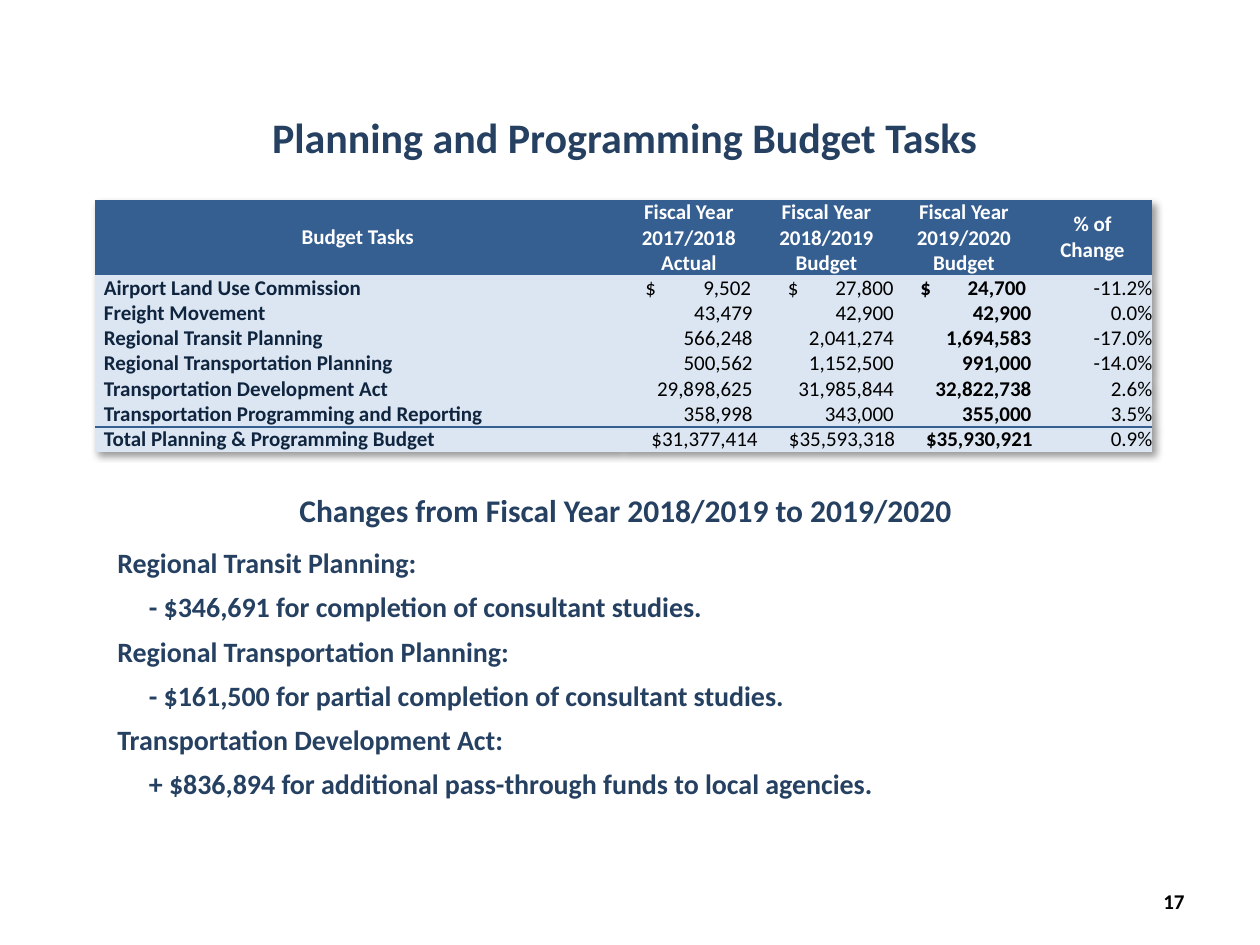
from lxml.etree import SubElement
from pptx import Presentation
from pptx.dml.color import RGBColor
from pptx.enum.text import MSO_ANCHOR as Anchor, PP_ALIGN as Align
from pptx.oxml.ns import qn
from pptx.util import Inches, Pt

COLORS = {
    "navy": "254061", "header": "365F91", "body": "DCE6F2",
    "task": "0F243E", "black": "000000", "white": "FFFFFF",
}
FONT = "Calibri"
UNIT = Inches(10) / 120
PLAIN_STYLE = "{2D5ABB26-0587-4C30-8999-92F81FD0307C}"

HEADER = [
    ["Budget Tasks"],
    ["Fiscal Year 2017/2018", "Actual"],
    ["Fiscal Year 2018/2019", "Budget"],
    ["Fiscal Year 2019/2020", "Budget"],
    ["% of Change"],
]
TASKS = [
    ["Airport Land Use Commission", "$\t9,502", "$\t27,800", "$\t24,700", "-11.2%"],
    ["Freight Movement", "43,479", "42,900", "42,900", "0.0%"],
    ["Regional Transit Planning", "566,248", "2,041,274", "1,694,583", "-17.0%"],
    ["Regional Transportation Planning", "500,562", "1,152,500", "991,000", "-14.0%"],
    ["Transportation Development Act", "29,898,625", "31,985,844", "32,822,738", "2.6%"],
    ["Transportation Programming and Reporting", "358,998", "343,000", "355,000", "3.5%"],
    ["Total Planning & Programming Budget", "$31,377,414", "$35,593,318", "$35,930,921", "0.9%"],
]
CHANGES = [
    ("Regional Transit Planning:", "- $346,691 for completion of consultant studies."),
    ("Regional Transportation Planning:",
     "- $161,500 for partial completion of consultant studies."),
    ("Transportation Development Act:",
     "+ $836,894 for additional pass-through funds to local agencies."),
]
COLUMNS = [50, 13.1, 13.1, 13.1, 11.4]
ROWS = [7.2] + [2.4] * len(TASKS)
LEFT_INSETS = [0.07, 0.2, 0.24, 0.2, 0]
RIGHT_INSETS = [0.07, 0.04, 0.01, 0.01, 0]


def grid(count):
    """Turn a number of grid units into a length."""
    return round(count * UNIT)


def style(paragraph, size, color, bold=True):
    """Set the font of a paragraph."""
    font = paragraph.font
    font.name, font.size, font.bold = FONT, Pt(size), bold
    font.color.rgb = RGBColor.from_string(COLORS[color])


def add_frame(slide, box, anchor=Anchor.TOP):
    """Add a wrapping text box and return its text frame."""
    frame = slide.shapes.add_textbox(*map(grid, box)).text_frame
    frame.word_wrap = True
    frame.vertical_anchor = anchor
    return frame


def add_line(slide, box, wording, size, color="navy", align=Align.CENTER, anchor=Anchor.TOP):
    """Add one line of text, such as a heading or the page number."""
    line = add_frame(slide, box, anchor).paragraphs[0]
    line.text, line.alignment = wording, align
    style(line, size, color)


def fill_cell(cell, lines, insets, fill, color, bold, align, anchor):
    """Write lines into a table cell and style it."""
    cell.margin_left, cell.margin_right = map(Inches, insets)
    cell.margin_top = cell.margin_bottom = 0
    cell.vertical_anchor = anchor
    cell.text_frame.text = "\n".join(lines)
    for paragraph in cell.text_frame.paragraphs:
        paragraph.alignment = align
        if "\t" in paragraph.text:
            paragraph.alignment = Align.LEFT
            stops = SubElement(paragraph._p.get_or_add_pPr(), qn("a:tabLst"))
            SubElement(stops, qn("a:tab"), pos=str(Inches(0.84)), algn="r")
        style(paragraph, 12, color, bold)
    cell.fill.solid()
    cell.fill.fore_color.rgb = RGBColor.from_string(COLORS[fill])


def add_rule(cell, edge):
    """Draw a border on one edge of a cell."""
    properties = cell._tc.get_or_add_tcPr()
    rule = properties.makeelement(qn(f"a:{edge}"), {"w": str(Pt(1.5))})
    properties.insert(0, rule)
    SubElement(SubElement(rule, qn("a:solidFill")), qn("a:srgbClr"), val=COLORS["header"])


def add_shadow(table):
    """Give the table a soft shadow to the lower right."""
    effects = table._tbl.tblPr.makeelement(qn("a:effectLst"), {})
    table._tbl.tblPr.insert(0, effects)
    shadow = SubElement(effects, qn("a:outerShdw"), blurRad=str(Pt(4)), dist=str(Pt(3)),
                        dir="2700000", algn="tl", rotWithShape="0")
    tint = SubElement(shadow, qn("a:srgbClr"), val=COLORS["black"])
    SubElement(tint, qn("a:alpha"), val="40000")


def add_budget_table(slide, left, top):
    """Add the table of budget tasks with its corner at the given place."""
    box = (left, top, sum(COLUMNS), sum(ROWS))
    table = slide.shapes.add_table(len(ROWS), len(COLUMNS), *map(grid, box)).table
    table.horz_banding = False
    table._tbl.tblPr.find(qn("a:tableStyleId")).text = PLAIN_STYLE
    for column, width in zip(table.columns, COLUMNS):
        column.width = grid(width)
    for row, height in zip(table.rows, ROWS):
        row.height = grid(height)
    for index, lines in enumerate(HEADER):
        fill_cell(table.cell(0, index), lines, (0.07, 0.07), "header", "white", True,
                  Align.CENTER, Anchor.MIDDLE)
    total = len(TASKS)
    for number, task in enumerate(TASKS, 1):
        for index, (wording, left_inset, right_inset) in enumerate(
                zip(task, LEFT_INSETS, RIGHT_INSETS)):
            is_name = index == 0
            insets = (left_inset if is_name or "\t" in wording else 0,
                      0 if number == total else right_inset)
            fill_cell(table.cell(number, index), [wording], insets, "body",
                      "task" if is_name else "black", index in (0, 3),
                      Align.LEFT if is_name else Align.RIGHT, Anchor.BOTTOM)
    for index in range(len(COLUMNS)):
        add_rule(table.cell(total - 1, index), "lnB")
        add_rule(table.cell(total, index), "lnT")
    add_shadow(table)


def add_changes(slide, box):
    """Add each changed task with its indented reason below."""
    frame = add_frame(slide, box)
    lines = [(wording, level) for change in CHANGES for level, wording in enumerate(change)]
    for index, (wording, level) in enumerate(lines):
        paragraph = frame.add_paragraph() if index else frame.paragraphs[0]
        paragraph.text = wording
        if index:
            paragraph.space_before = Pt(6)
        if level:
            paragraph._p.get_or_add_pPr().set("marL", str(Inches(0.25)))
        style(paragraph, 16, "navy")


def main():
    """Build the budget slide and save it."""
    deck = Presentation()
    deck.slide_width, deck.slide_height = grid(120), grid(90)
    slide = deck.slides.add_slide(deck.slide_layouts[6])
    add_line(slide, (17, 10, 85, 6), "Planning and Programming Budget Tasks", 24)
    add_budget_table(slide, 9.06, 19)
    add_line(slide, (12.6, 46.2, 94, 4.8), "Changes from Fiscal Year 2018/2019 to 2019/2020", 18)
    add_changes(slide, (10, 51.4, 103, 25.7))
    add_line(slide, (86, 83.4, 28, 4.8), "17", 12, "black", Align.RIGHT, Anchor.MIDDLE)
    deck.save("out.pptx")


if __name__ == "__main__":
    main()
